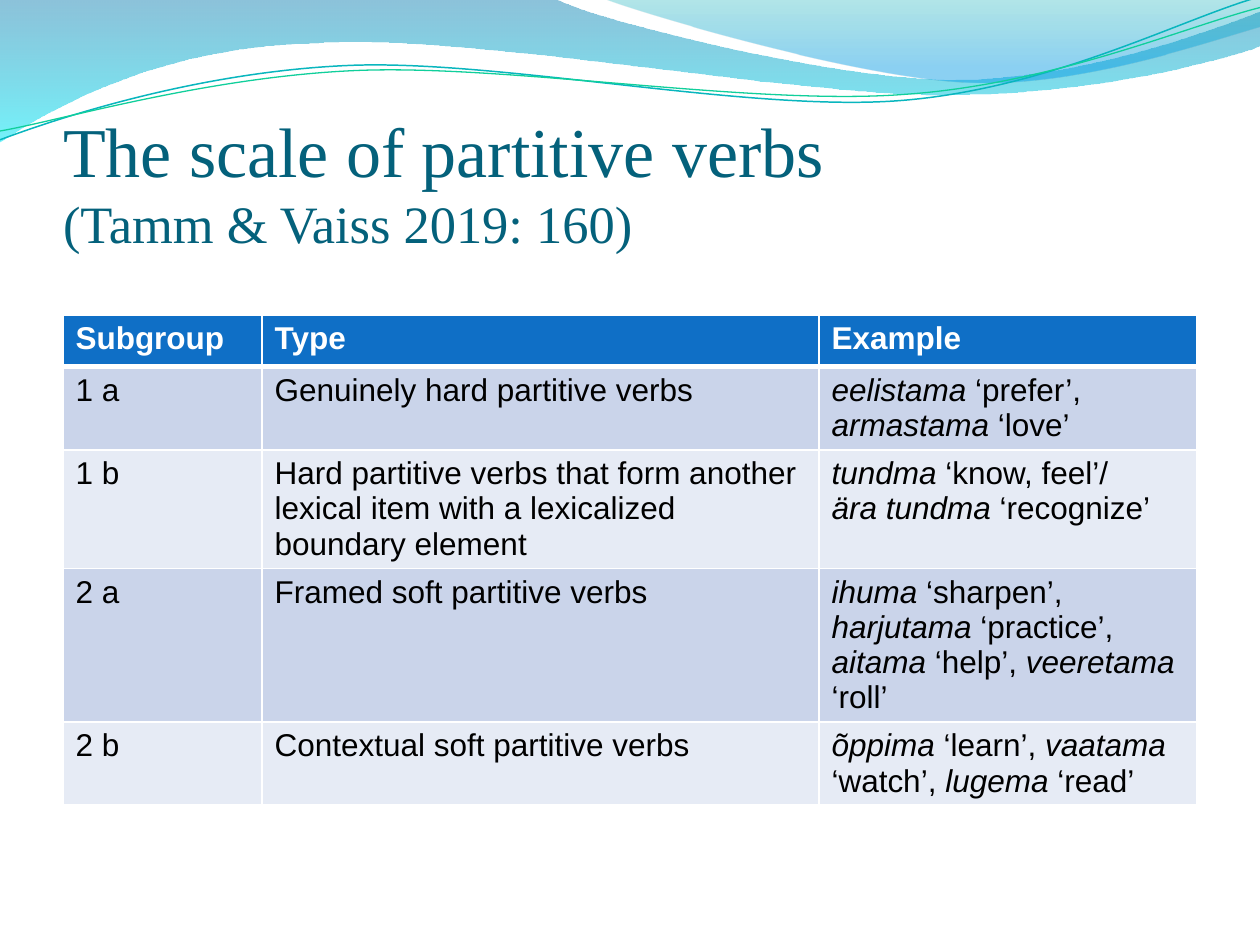
from lxml.etree import SubElement
from pptx import Presentation
from pptx.dml.color import RGBColor
from pptx.enum.text import MSO_ANCHOR, MSO_AUTO_SIZE, PP_ALIGN
from pptx.oxml import parse_xml
from pptx.oxml.ns import nsdecls, qn
from pptx.util import Inches, Pt

# Wave outlines in inches: a pair is a corner, a six-tuple is a Bezier curve.
LEFT_WAVE = [
    (0, 0), (4.4, -0.01), (4.76, 0.17, 6.64, 0.63, 7.58, 0.63),
    (8.53, 0.63, 9.58, 0.26, 10, 0.09), (10.01, 0.36),
    (9.83, 0.44, 8.7, 0.76, 7.46, 0.75), (6.22, 0.75, 3.82, 0.28, 2.57, 0.34),
    (1.29, 0.36, 0.46, 0.83, -0.01, 1.13), (0, 0),
]
RIGHT_WAVE = [
    (4.79, -0.01), (5.09, 0.11, 6.82, 0.62, 7.69, 0.65),
    (8.56, 0.69, 9.61, 0.32, 10, 0.21), (10, 0), (4.79, -0.01),
]
UPPER_STRAND = [
    (0, 1.11), (0.48, 0.93, 1.58, 0.57, 2.77, 0.52),
    (3.95, 0.47, 5.93, 0.89, 7.13, 0.8), (8.33, 0.71, 9.38, 0.15, 9.98, -0.02),
]
LOWER_STRAND = [
    (0, 1.04), (0.47, 0.96, 1.64, 0.61, 2.83, 0.56),
    (4.03, 0.51, 5.97, 0.84, 7.17, 0.75), (8.36, 0.67, 9.41, 0.21, 10, 0.06),
]

# Asterisks enclose italics; \v is a line break.
VERB_ROWS = [
    ("Subgroup", "Type", "Example"),
    ("1 a", "Genuinely hard partitive verbs",
     "*eelistama *‘prefer’, *armastama* ‘love’"),
    ("1 b", "Hard partitive verbs that form another lexical item "
            "with a lexicalized boundary element",
     "*tundma* ‘know, feel’/ \v*ära tundma *‘recognize’"),
    ("2 a", "Framed soft partitive verbs",
     "*ihuma* ‘sharpen’, *harjutama *‘practice’, "
     "*aitama* ‘help’, *veeretama* ‘roll’"),
    ("2 b", "Contextual soft partitive verbs",
     "*õppima* ‘learn’, *vaatama *‘watch’, *lugema *‘read’"),
]


def rgb(color):
    return RGBColor.from_string(color)


class WaveSlide:
    title_font = "Times New Roman"
    table_font = "Arial"
    title_color = "04617B"
    header_fill = "0F6FC6"
    band_fills = ("E6EBF5", "CAD4EA")

    def __init__(self, prs):
        self.slide = prs.slides.add_slide(prs.slide_layouts[5])

    def outline(self, path, close):
        """Build a freeform through the end points, then bend its curved parts."""
        ends = [(Inches(part[-2]), Inches(part[-1])) for part in path]
        builder = self.slide.shapes.build_freeform(*ends[0])
        builder.add_line_segments(ends[1:], close=close)
        shape = builder.convert_to_shape()
        shape.shadow.inherit = False
        lines = list(shape._element.spPr.iter(qn("a:lnTo")))
        for line, part in zip(lines, path[1:]):
            if len(part) == 6:
                line.getparent().replace(line, self.curve(shape, part))
        return shape

    def curve(self, shape, part):
        bezier = parse_xml(f"<a:cubicBezTo {nsdecls('a')}/>")
        for x, y in zip(part[::2], part[1::2]):
            SubElement(bezier, qn("a:pt"), x=str(Inches(x) - shape.left),
                       y=str(Inches(y) - shape.top))
        return bezier

    def wave(self, path, stops):
        """Add a filled wave; each stop is (position, color, opacity percent)."""
        shape = self.outline(path, close=True)
        shape.line.fill.background()
        shape.fill.gradient()
        shape.fill.gradient_angle = 270
        for stop, (position, color, _) in zip(shape.fill.gradient_stops, stops):
            stop.position = position
            stop.color.rgb = rgb(color)
        for color_xml, (_, _, opacity) in zip(
                shape._element.spPr.iter(qn("a:srgbClr")), stops):
            SubElement(color_xml, qn("a:alpha"), val=str(opacity * 1000))

    def strand(self, path, color, width):
        shape = self.outline(path, close=False)
        shape.fill.background()
        shape.line.color.rgb = rgb(color)
        shape.line.width = Pt(width)

    def title(self, heading, source):
        title = self.slide.shapes.title
        title.left, title.top = Inches(0.5), Inches(0.77)
        title.width, title.height = Inches(9), Inches(1.25)
        frame = title.text_frame
        frame.margin_left = frame.margin_right = frame.margin_bottom = 0
        frame.margin_top = Inches(0.05)
        frame.vertical_anchor = MSO_ANCHOR.BOTTOM
        frame.auto_size = MSO_AUTO_SIZE.NONE
        frame.word_wrap = True
        paragraph = frame.paragraphs[0]
        paragraph.alignment = PP_ALIGN.LEFT
        paragraph.font.name = self.title_font
        paragraph.font.color.rgb = rgb(self.title_color)
        for text, size in ((heading + "\v", 40), (source, 30)):
            self.add_text(paragraph, text).size = Pt(size)

    def add_text(self, paragraph, text):
        """Add a run, plus a line break where text ends in \\v; return its font."""
        run = paragraph.add_run()
        run.text = text.rstrip("\v")
        if text.endswith("\v"):
            paragraph.add_line_break()
        return run.font

    def table(self, rows, left, top, widths, row_height):
        """Add a table whose rows grow from row_height to fit their text."""
        table = self.slide.shapes.add_table(
            len(rows), len(widths), Inches(left), Inches(top),
            Inches(sum(widths)), Inches(row_height * len(rows))).table
        for column, width in zip(table.columns, widths):
            column.width = Inches(width)
        for r, texts in enumerate(rows):
            table.rows[r].height = Inches(row_height)
            for c, text in enumerate(texts):
                self.fill_cell(table.cell(r, c), text, r)

    def fill_cell(self, cell, text, row):
        header = row == 0
        if header:
            self.border(cell, {"lnL": 1, "lnR": 1, "lnT": 1, "lnB": 3})
        cell.fill.solid()
        cell.fill.fore_color.rgb = rgb(
            self.header_fill if header else self.band_fills[row % 2])
        paragraph = cell.text_frame.paragraphs[0]
        font = paragraph.font
        font.name, font.size, font.bold = self.table_font, Pt(18), header
        font.color.rgb = rgb("FFFFFF" if header else "000000")
        for i, part in enumerate(text.split("*")):
            if part:
                run_font = self.add_text(paragraph, part)
                if i % 2:
                    run_font.italic = True

    def border(self, cell, widths):
        properties = cell._tc.get_or_add_tcPr()
        for side, width in widths.items():
            line = SubElement(properties, qn(f"a:{side}"), w=str(Pt(width)))
            fill = SubElement(line, qn("a:solidFill"))
            SubElement(fill, qn("a:srgbClr"), val="FFFFFF")


def main():
    prs = Presentation()
    prs.slide_width, prs.slide_height = Inches(10), Inches(7.5)
    page = WaveSlide(prs)
    page.wave(LEFT_WAVE, [(0, "0079AD", 45), (1, "00E9F7", 55)])
    page.wave(RIGHT_WAVE, [(0, "00ABB4", 30), (0.8, "0099E4", 45)])
    page.strand(UPPER_STRAND, "09B6BE", 0.85)
    page.strand(LOWER_STRAND, "10CF9B", 0.75)
    page.title("The scale of partitive verbs ", "(Tamm & Vaiss 2019: 160)")
    page.table(VERB_ROWS, 0.5, 2.5, widths=(1.58, 4.42, 3), row_height=0.41)
    prs.save("out.pptx")


if __name__ == "__main__":
    main()
